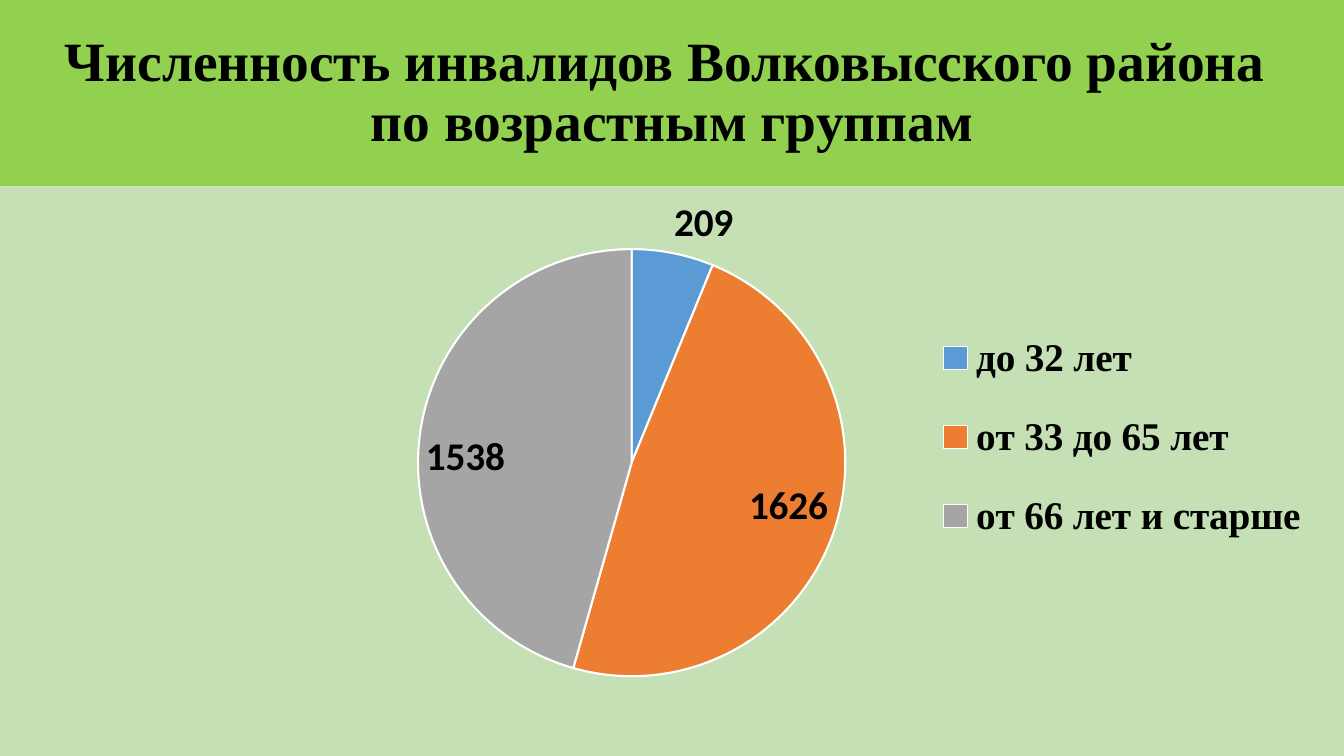
from lxml import etree
from pptx import Presentation
from pptx.chart.data import CategoryChartData
from pptx.dml.color import RGBColor
from pptx.enum import chart as charts, text
from pptx.oxml import ns
from pptx.util import Inches, Pt

COLORS = {
    "band": "92D050",
    "backdrop": "C5E0B4",
    "ink": "000000",
    "edge": "FFFFFF",
    "young": "5B9BD5",
    "middle": "ED7D31",
    "senior": "A5A5A5",
}
AGE_GROUPS = [
    ("до 32 лет", 209, "young"),
    ("от 33 до 65 лет", 1626, "middle"),
    ("от 66 лет и старше", 1538, "senior"),
]
WIDTH, HEIGHT, BAND_HEIGHT = 13.33, 7.5, 1.85


def rgb(name):
    return RGBColor.from_string(COLORS[name])


def set_font(font, size, face):
    font.size = Pt(size)
    font.name = face
    font.bold = True
    font.color.rgb = rgb("ink")


def make_layout(x, y, w, h, inner=False):
    layout = etree.Element(ns.qn("c:layout"))
    manual = etree.SubElement(layout, ns.qn("c:manualLayout"))
    settings = [("xMode", "edge"), ("yMode", "edge"), ("x", x), ("y", y), ("w", w), ("h", h)]
    if inner:
        settings.insert(0, ("layoutTarget", "inner"))
    for tag, value in settings:
        etree.SubElement(manual, ns.qn(f"c:{tag}"), val=str(value))
    return layout


def place_part(part, layout, index):
    for old in part.findall(ns.qn("c:layout")):
        part.remove(old)
    part.insert(index, layout)


def fill_backdrop(chart):
    properties = etree.Element(ns.qn("c:spPr"))
    fill = etree.SubElement(properties, ns.qn("a:solidFill"))
    etree.SubElement(fill, ns.qn("a:srgbClr"), val=COLORS["backdrop"])
    line = etree.SubElement(properties, ns.qn("a:ln"))
    etree.SubElement(line, ns.qn("a:noFill"))
    chart.element.find(ns.qn("c:chart")).addnext(properties)


def add_heading(page, left, top, width, height):
    title = page.shapes.title
    title.left, title.top, title.width, title.height = map(Inches, (left, top, width, height))
    title.fill.solid()
    title.fill.fore_color.rgb = rgb("band")
    frame = title.text_frame
    frame.word_wrap = True
    frame.auto_size = text.MSO_AUTO_SIZE.NONE
    frame.vertical_anchor = text.MSO_ANCHOR.MIDDLE
    para = frame.paragraphs[0]
    para.text = "Численность инвалидов Волковысского района \vпо возрастным группам"
    para.alignment = text.PP_ALIGN.CENTER
    para.line_spacing = 0.9
    set_font(para.font, 39.6, "Times New Roman")


def add_age_pie(page, left, top, width, height):
    data = CategoryChartData()
    data.categories = [name for name, count, color in AGE_GROUPS]
    data.add_series("Series 1", [count for name, count, color in AGE_GROUPS])
    box = map(Inches, (left, top, width, height))
    chart = page.shapes.add_chart(charts.XL_CHART_TYPE.PIE, *box, data).chart
    chart.has_title = False
    chart.font.size = Pt(10)
    chart.font.name = "Calibri"
    chart.font.color.rgb = rgb("ink")
    fill_backdrop(chart)

    chart.has_legend = True
    legend = chart.legend
    legend.position = charts.XL_LEGEND_POSITION.BOTTOM
    legend.include_in_layout = False
    set_font(legend.font, 28, "Times New Roman")

    plot_area = chart.element.find(".//" + ns.qn("c:plotArea"))
    place_part(plot_area, make_layout(0.31, 0.11, 0.32, 0.75, inner=True), 0)
    place_part(chart.element.find(".//" + ns.qn("c:legend")), make_layout(0.69, 0.2, 0.29, 0.48), 1)

    plot = chart.plots[0]
    plot.vary_by_categories = True
    series = plot.series[0]
    labels = series.data_labels
    labels.show_value = True
    labels.show_percentage = False
    labels.position = charts.XL_LABEL_POSITION.INSIDE_END
    set_font(labels.font, 28, "Calibri")
    for index, (name, count, color) in enumerate(AGE_GROUPS):
        wedge = series.points[index].format
        wedge.fill.solid()
        wedge.fill.fore_color.rgb = rgb(color)
        wedge.line.color.rgb = rgb("edge")
        wedge.line.width = Pt(1.5)
    smallest = series.points[0].data_label
    set_font(smallest.font, 28, "Calibri")
    smallest.position = charts.XL_LABEL_POSITION.OUTSIDE_END


def main():
    deck = Presentation()
    deck.slide_width, deck.slide_height = Inches(WIDTH), Inches(HEIGHT)
    page = deck.slides.add_slide(deck.slide_layouts[5])
    add_heading(page, 0, 0, WIDTH, BAND_HEIGHT)
    add_age_pie(page, 0, BAND_HEIGHT, WIDTH, HEIGHT - BAND_HEIGHT)
    deck.save("out.pptx")


if __name__ == "__main__":
    main()
